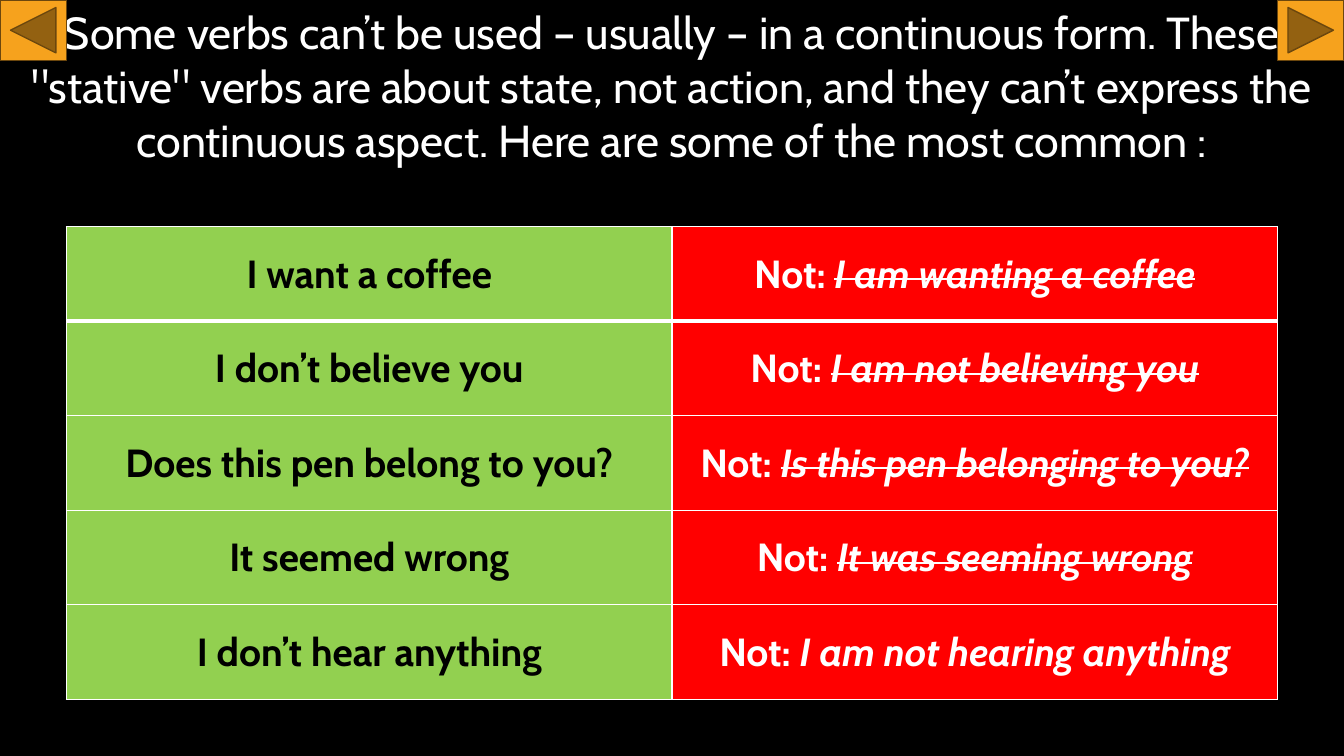
from dataclasses import dataclass

from lxml import etree
from pptx import Presentation
from pptx.dml.color import RGBColor
from pptx.enum.shapes import MSO_SHAPE
from pptx.enum.text import MSO_ANCHOR, MSO_AUTO_SIZE, PP_ALIGN
from pptx.oxml.ns import qn
from pptx.util import Inches, Pt

BACK = MSO_SHAPE.ACTION_BUTTON_BACK_OR_PREVIOUS
NEXT = MSO_SHAPE.ACTION_BUTTON_FORWARD_OR_NEXT
CENTER = PP_ALIGN.CENTER
TOP, MIDDLE = MSO_ANCHOR.TOP, MSO_ANCHOR.MIDDLE

INTRO = (
    'Some verbs can’t be used – usually – in a continuous form. These "stative" '
    "verbs are about state, not action, and they can’t express the continuous "
    "aspect. Here are some of the most common :"
)
# correct sentence, wrong sentence, wrong sentence struck through
EXAMPLES = [
    ("I want a coffee", "I am wanting a coffee", True),
    ("I don’t believe you", "I am not believing you", True),
    ("Does this pen belong to you?", "Is this pen belonging to you?", True),
    ("It seemed wrong", "It was seeming wrong", True),
    ("I don’t hear anything", "I am not hearing anything", False),
]


@dataclass(frozen=True)
class Theme:
    font: str = "Cabin"
    intro_size: int = 32
    cell_size: int = 28
    background: str = "000000"
    light: str = "FFFFFF"
    dark: str = "000000"
    right: str = "92D050"
    wrong: str = "FF0000"
    button: str = "F6A21D"
    button_line: str = "6C470D"


THEME = Theme()
WIDTH, HEIGHT = 13.33, 7.5
BUTTON_W, BUTTON_H = 0.66, 0.6
INTRO_H = 1.36
TABLE_TOP = 0.3 * HEIGHT
TABLE_W = WIDTH - 2 * BUTTON_W
ROW_H = HEIGHT / 8


def rgb(value):
    return RGBColor.from_string(value)


def style(font, size, color, bold=False, italic=False):
    font.name, font.size = THEME.font, Pt(size)
    font.bold, font.italic = bold, italic
    font.color.rgb = rgb(color)


def add_intro(s):
    title = s.shapes.title
    title.left, title.top = 0, 0
    title.width, title.height = Inches(WIDTH), Inches(INTRO_H)
    tf = title.text_frame
    tf.text = INTRO
    tf.word_wrap, tf.auto_size = True, MSO_AUTO_SIZE.NONE
    tf.vertical_anchor = TOP
    p = tf.paragraphs[0]
    p.alignment, p.line_spacing = CENTER, 1.0
    style(p.runs[0].font, THEME.intro_size, THEME.light)


def add_button(s, kind, left):
    sp = s.shapes.add_shape(
        kind, Inches(left), 0, Inches(BUTTON_W), Inches(BUTTON_H))
    sp.shadow.inherit = False
    sp.fill.solid()
    sp.fill.fore_color.rgb = rgb(THEME.button)
    sp.line.color.rgb = rgb(THEME.button_line)
    sp.line.width = Pt(1)


def set_borders(cell, top, bottom):
    tc_pr = cell._tc.get_or_add_tcPr()
    widths = {"a:lnL": 1, "a:lnR": 1, "a:lnT": top, "a:lnB": bottom}
    for i, (tag, width) in enumerate(widths.items()):
        ln = etree.Element(qn(tag), w=str(Pt(width)))
        fill = etree.SubElement(ln, qn("a:solidFill"))
        etree.SubElement(fill, qn("a:srgbClr"), val=THEME.light)
        tc_pr.insert(i, ln)


def fill_cell(cell, fill, color, parts):
    """Write parts, given as (text, italic, struck), into a filled cell."""
    cell.fill.solid()
    cell.fill.fore_color.rgb = rgb(fill)
    cell.vertical_anchor = MIDDLE
    p = cell.text_frame.paragraphs[0]
    p.alignment = CENTER
    for text, italic, struck in parts:
        r = p.add_run()
        r.text = text
        style(r.font, THEME.cell_size, color, True, italic)
        if struck:
            r._r.get_or_add_rPr().set("strike", "sngStrike")


def add_examples(s):
    table = s.shapes.add_table(
        len(EXAMPLES), 2, Inches(BUTTON_W), Inches(TABLE_TOP),
        Inches(TABLE_W), Inches(ROW_H * len(EXAMPLES))).table
    table.horz_banding = False
    for i, (right, wrong, struck) in enumerate(EXAMPLES):
        good, bad = table.cell(i, 0), table.cell(i, 1)
        fill_cell(good, THEME.right, THEME.dark, [(right, False, False)])
        fill_cell(bad, THEME.wrong, THEME.light,
                  [("Not: ", False, False), (wrong, True, struck)])
        for cell in (good, bad):
            set_borders(cell, 3 if i == 1 else 1, 3 if i == 0 else 1)


def main():
    prs = Presentation()
    prs.slide_width, prs.slide_height = Inches(WIDTH), Inches(HEIGHT)
    s = prs.slides.add_slide(prs.slide_layouts[5])
    s.background.fill.solid()
    s.background.fill.fore_color.rgb = rgb(THEME.background)
    add_intro(s)
    add_button(s, BACK, 0)
    add_button(s, NEXT, WIDTH - BUTTON_W)
    add_examples(s)
    prs.save("out.pptx")


if __name__ == "__main__":
    main()
